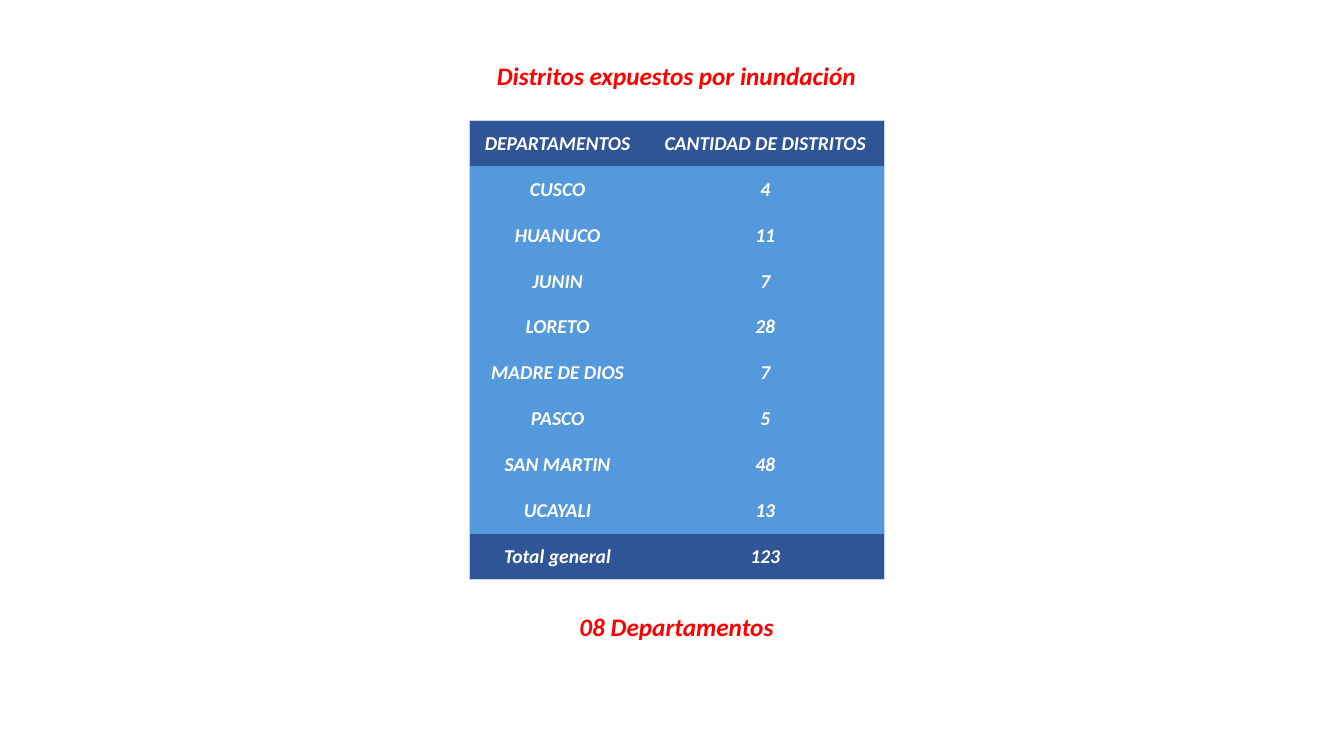
from dataclasses import dataclass
from lxml.etree import SubElement
from pptx import Presentation
from pptx.dml.color import RGBColor as Color
from pptx.enum.text import MSO_ANCHOR as Anchor, MSO_AUTO_SIZE as AutoSize, PP_ALIGN as Align
from pptx.oxml.ns import qn
from pptx.util import Inches, Pt


@dataclass(frozen=True)
class Theme:
    font: str = "Calibri"
    caption_size: int = 18
    table_size: int = 14
    caption: str = "FF0000"
    table_text: str = "FFFFFF"
    dark: str = "2F5597"
    light: str = "5499DB"
    border: str = "C4D5EB"


theme = Theme()


def format_text(text_frame, size, color):
    paragraph = text_frame.paragraphs[0]
    paragraph.alignment = Align.CENTER
    for run in paragraph.runs:
        font = run.font
        font.name, font.size = theme.font, Pt(size)
        font.bold = font.italic = True
        font.color.rgb = Color.from_string(color)


def draw_border(cell, side, visible):
    line = SubElement(cell._tc.get_or_add_tcPr(), qn(f"a:ln{side}"), w=str(Pt(0.5)))
    fill = SubElement(line, qn("a:solidFill" if visible else "a:noFill"))
    if visible:
        SubElement(fill, qn("a:srgbClr"), val=theme.border)


presentation = Presentation()
presentation.slide_width = Inches(13.33)
presentation.slide_height = Inches(7.5)
slide = presentation.slides.add_slide(presentation.slide_layouts[6])

departments = [
    ("CUSCO", 4),
    ("HUANUCO", 11),
    ("JUNIN", 7),
    ("LORETO", 28),
    ("MADRE DE DIOS", 7),
    ("PASCO", 5),
    ("SAN MARTIN", 48),
    ("UCAYALI", 13),
]
rows = [
    ("DEPARTAMENTOS", "CANTIDAD DE DISTRITOS"),
    *departments,
    ("Total general", sum(count for _, count in departments)),
]
column_widths = [Inches(1.76), Inches(2.36)]
row_height = Inches(0.456)
table_left, table_top = Inches(4.65), Inches(1.19)
table_width = sum(column_widths)
center = table_left + table_width // 2

captions = [
    ("Distritos expuestos por inundación", 0.55, 3.8, False),
    ("08 Departamentos", 6.02, 2.29, True),
]
for text, top, width, wraps in captions:
    box = slide.shapes.add_textbox(center - Inches(width) // 2, Inches(top), Inches(width), Inches(0.4))
    text_frame = box.text_frame
    text_frame.word_wrap = wraps
    text_frame.auto_size = AutoSize.SHAPE_TO_FIT_TEXT
    text_frame.text = text
    format_text(text_frame, theme.caption_size, theme.caption)

table = slide.shapes.add_table(
    len(rows), len(column_widths), table_left, table_top, table_width, row_height * len(rows)
).table
table.first_row = table.horz_banding = False
for column, width in zip(table.columns, column_widths):
    column.width = width

last_row, last_column = len(rows) - 1, len(column_widths) - 1
for row_index, values in enumerate(rows):
    table.rows[row_index].height = row_height
    for column_index, value in enumerate(values):
        cell = table.cell(row_index, column_index)
        cell.text = str(value)
        format_text(cell.text_frame, theme.table_size, theme.table_text)
        cell.vertical_anchor = Anchor.MIDDLE
        cell.margin_left = cell.margin_right = cell.margin_top = Inches(0.01)
        cell.margin_bottom = 0
        draw_border(cell, "L", column_index == 0)
        draw_border(cell, "R", column_index == last_column)
        draw_border(cell, "T", row_index == 0)
        draw_border(cell, "B", row_index == last_row)
        cell.fill.solid()
        shade = theme.dark if row_index in (0, last_row) else theme.light
        cell.fill.fore_color.rgb = Color.from_string(shade)

presentation.save("out.pptx")
